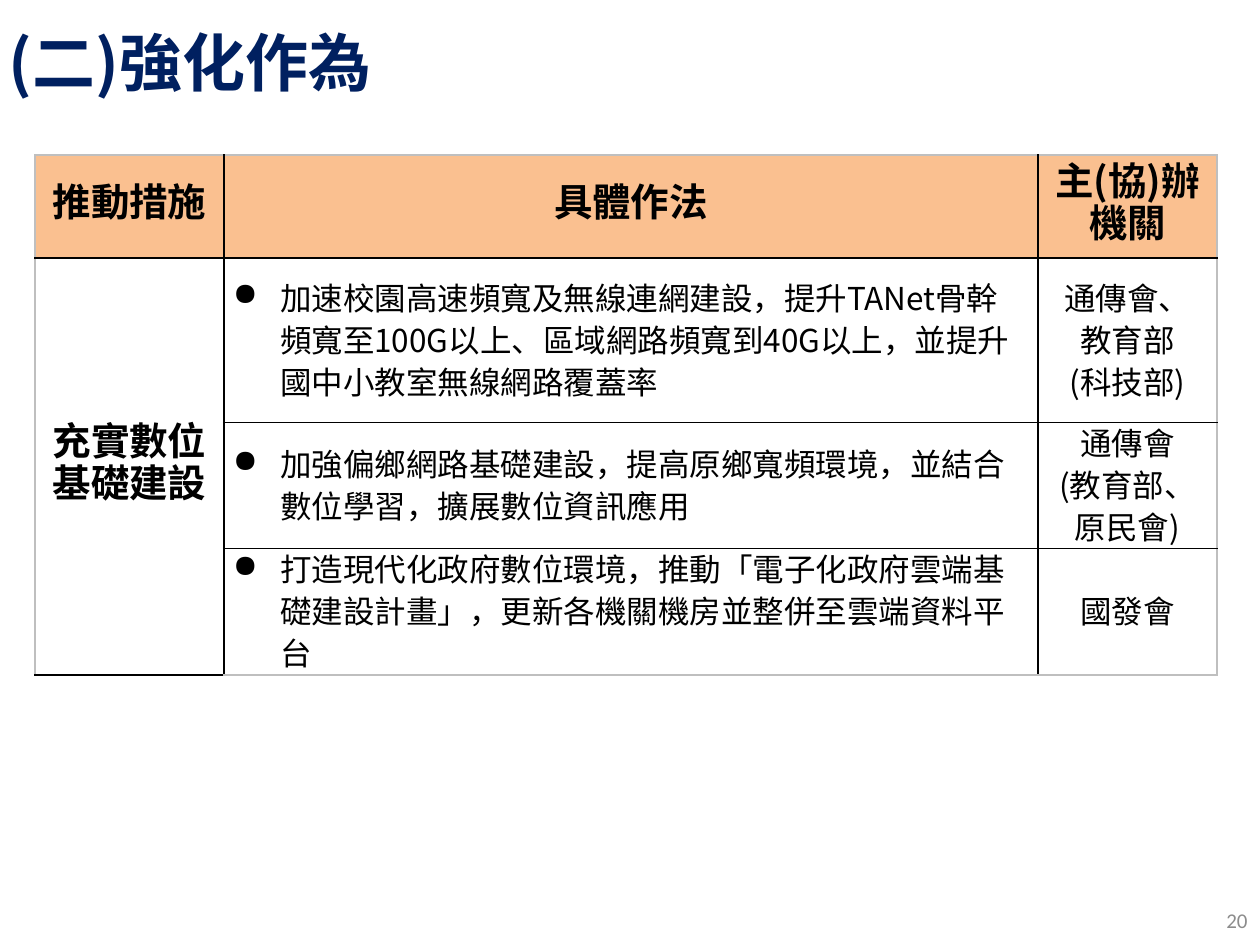
import pptx
import pptx.dml.color
import pptx.enum.text
import pptx.oxml
import pptx.oxml.ns
import pptx.util
from lxml import etree

Pt = pptx.util.Pt
ALIGN = pptx.enum.text.PP_ALIGN
MIDDLE = pptx.enum.text.MSO_ANCHOR.MIDDLE
CJK_FONT = "Noto Sans CJK SC"
COLORS = {"title": "002060", "text": "000000", "header": "FAC090",
          "number": "8C8C8C", "grid": "000000", "frame": "BFBFBF"}
COLUMNS = [108, 465, 102.5]
ROWS = [59, 94, 72, 72]
HEADERS = ["推動措施", "具體作法", "主(協)辦機關"]
MEASURE = "充實數位基礎建設"
ACTIONS = [
    ("加速校園高速頻寬及無線連網建設，提升TANet骨幹頻寬至100G以上、區域網路頻寬到40G以上，並提升國中小教室無線網路覆蓋率",
     ["通傳會、", "教育部", "(科技部)"]),
    ("加強偏鄉網路基礎建設，提高原鄉寬頻環境，並結合數位學習，擴展數位資訊應用",
     ["通傳會", "(教育部、原民會)"]),
    ("打造現代化政府數位環境，推動「電子化政府雲端基礎建設計畫」，更新各機關機房並整併至雲端資料平台",
     ["國發會"]),
]


def add_run(paragraph, text, size, color, bold=False, font=CJK_FONT):
    """Add one formatted run, with the same font for Latin and East Asian text."""
    run = paragraph.add_run()
    run.text = text
    run.font.size = Pt(size)
    run.font.bold = bold
    run.font.name = font
    run.font.color.rgb = pptx.dml.color.RGBColor.from_string(COLORS[color])
    east_asian = etree.SubElement(run._r.get_or_add_rPr(), pptx.oxml.ns.qn("a:ea"))
    east_asian.set("typeface", font)


def set_indent(paragraph, indent, bullet=None):
    """Give a paragraph a hanging indent and an optional bullet."""
    properties = paragraph._p.get_or_add_pPr()
    properties.set("marL", str(Pt(indent)))
    properties.set("indent", str(-Pt(indent)))
    if bullet:
        mark = etree.SubElement(properties, pptx.oxml.ns.qn("a:buChar"))
        mark.set("char", bullet)


def add_text_box(slide, left, top, width, height):
    """Add a wrapping, vertically centred text box and return its paragraph."""
    frame = slide.shapes.add_textbox(Pt(left), Pt(top), Pt(width), Pt(height)).text_frame
    frame.word_wrap = True
    frame.vertical_anchor = MIDDLE
    return frame.paragraphs[0]


def add_title(slide, left, top, width, height):
    """Place the slide title."""
    paragraph = add_text_box(slide, left, top, width, height)
    set_indent(paragraph, 57)
    add_run(paragraph, "(二)強化作為", 36, "title", bold=True)


def add_page_number(slide, left, top, width, height):
    """Place the page number at the right of its box."""
    paragraph = add_text_box(slide, left, top, width, height)
    paragraph.alignment = ALIGN.RIGHT
    add_run(paragraph, "20", 12, "number", font="Calibri")


def set_border(cell, side, color, width):
    """Draw one side of a cell."""
    cell._tc.get_or_add_tcPr().append(pptx.oxml.parse_xml(
        f'<a:ln{side} {pptx.oxml.ns.nsdecls("a")} w="{Pt(width)}"><a:solidFill>'
        f'<a:srgbClr val="{COLORS[color]}"/></a:solidFill></a:ln{side}>'))


def style_cell(cell, row, column):
    """Set the borders, fill, margins and anchor of a cell by its place."""
    last_row, last_column = len(ROWS) - 1, len(COLUMNS) - 1
    edges = {"L": column == 0, "R": column == last_column,
             "T": row == 0, "B": row == last_row}
    thick_sides = {0: "R", 1: "L"}
    for side, outer in edges.items():
        width = 1.5 if thick_sides.get(column) == side and not outer else 1
        set_border(cell, side, "frame" if outer else "grid", width)
    if row == 0:
        cell.fill.solid()
        cell.fill.fore_color.rgb = pptx.dml.color.RGBColor.from_string(COLORS["header"])
    else:
        cell.fill.background()
    cell.margin_left = cell.margin_right = Pt(5)
    cell.margin_top = cell.margin_bottom = Pt(0)
    cell.vertical_anchor = MIDDLE


def write_cell(cell, lines, size=18, bold=False, bullet=None):
    """Write one paragraph per line, bulleted or centred."""
    frame = cell.text_frame
    for index, line in enumerate(lines):
        paragraph = frame.add_paragraph() if index else frame.paragraphs[0]
        paragraph.line_spacing = Pt(24)
        if bullet:
            set_indent(paragraph, 27, bullet)
        else:
            paragraph.alignment = ALIGN.CENTER
        add_run(paragraph, line, size, "text", bold)


def add_measures_table(slide, left, top):
    """Place the table of measures, actions and agencies."""
    table = slide.shapes.add_table(len(ROWS), len(COLUMNS), Pt(left), Pt(top),
                                   Pt(sum(COLUMNS)), Pt(sum(ROWS))).table
    table.first_row = table.horz_banding = False
    for column, width in zip(table.columns, COLUMNS):
        column.width = Pt(width)
    for row, height in zip(table.rows, ROWS):
        row.height = Pt(height)
    for row in range(len(ROWS)):
        for column in range(len(COLUMNS)):
            style_cell(table.cell(row, column), row, column)
    table.cell(1, 0).merge(table.cell(len(ROWS) - 1, 0))
    for column, header in enumerate(HEADERS):
        write_cell(table.cell(0, column), [header], 22, bold=True)
    write_cell(table.cell(1, 0), [MEASURE], 22, bold=True)
    for row, (action, agencies) in enumerate(ACTIONS, start=1):
        write_cell(table.cell(row, 1), [action], bullet="●")
        write_cell(table.cell(row, 2), agencies)


def main():
    """Build the slide and save it."""
    presentation = pptx.Presentation()
    presentation.slide_width, presentation.slide_height = Pt(720), Pt(540)
    slide = presentation.slides.add_slide(presentation.slide_layouts[6])
    add_page_number(slide, 552, 511, 168, 29)
    add_title(slide, -2, 9.5, 720, 51)
    add_measures_table(slide, 20, 88.5)
    presentation.save("out.pptx")


if __name__ == "__main__":
    main()
